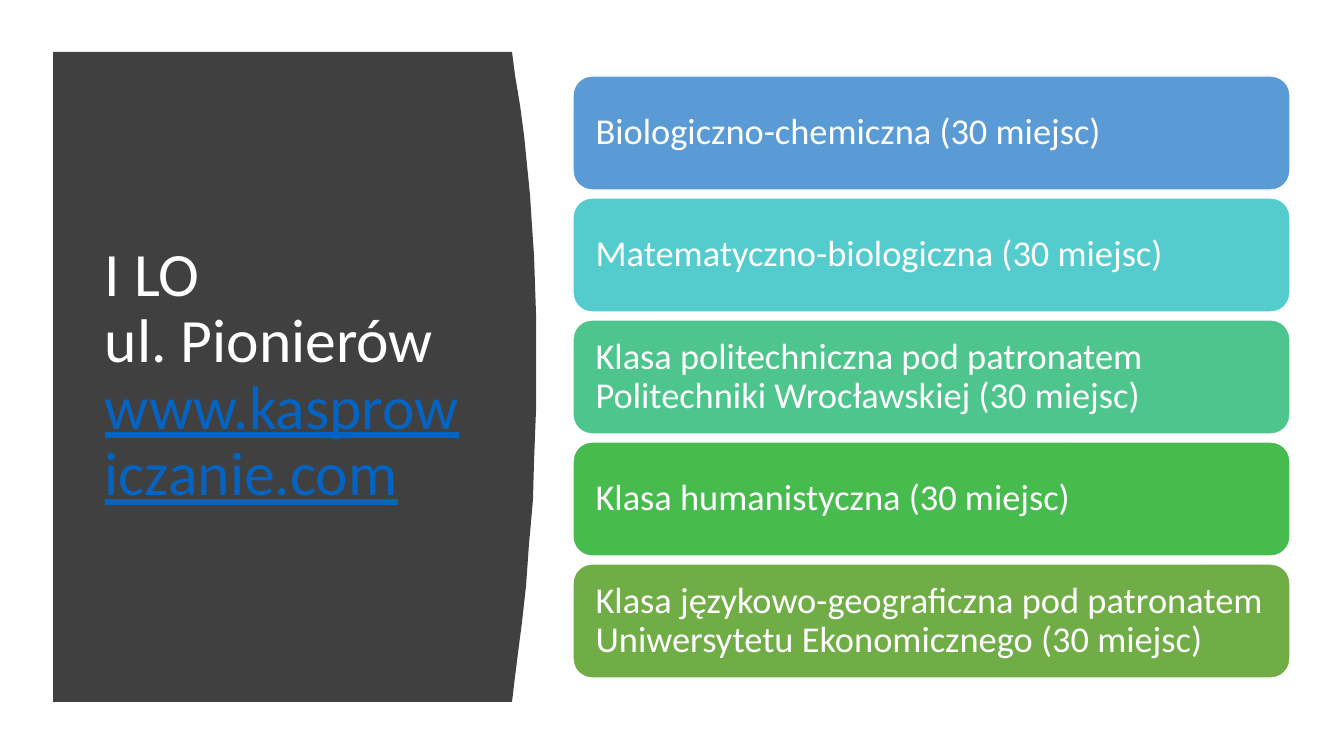
from pptx import Presentation
from pptx.dml.color import RGBColor
from pptx.enum.shapes import MSO_SHAPE
from pptx.enum.text import MSO_ANCHOR, PP_ALIGN
from pptx.util import Pt

WHITE = RGBColor(0xFF, 0xFF, 0xFF)
DARK = RGBColor(0x40, 0x40, 0x40)
LINK = RGBColor(0x05, 0x63, 0xC1)
BLUE = RGBColor(0x5B, 0x9B, 0xD5)
TEAL = RGBColor(0x54, 0xCC, 0xCD)
MINT = RGBColor(0x4D, 0xC5, 0x8D)
GREEN = RGBColor(0x48, 0xBB, 0x4F)
OLIVE = RGBColor(0x70, 0xAD, 0x47)

# Content
TITLE = [
    ("I LO \vul. Pionierów\v", {"color": WHITE}),
    ("www.kasprowiczanie.com", {"color": LINK, "underline": True}),
]
CLASSES = [
    ("Biologiczno-chemiczna (30 miejsc)", BLUE),
    ("Matematyczno-biologiczna (30 miejsc)", TEAL),
    ("Klasa politechniczna pod patronatem Politechniki Wrocławskiej (30 miejsc)", MINT),
    ("Klasa humanistyczna (30 miejsc)", GREEN),
    ("Klasa językowo-geograficzna pod patronatem Uniwersytetu Ekonomicznego (30 miejsc)", OLIVE),
]

# Layout in px
PX = 914400 / 100.8
SIZE = (1344, 756)
PANEL = [
    (53, 52), (512, 52), (515, 75), (520, 105), (524, 135), (527, 165),
    (530, 195), (532, 226), (534, 255), (535, 284), (536, 314), (536, 342),
    (536, 383), (536, 410), (535, 436), (534, 462), (533, 499), (531, 522),
    (529, 544), (526, 586), (522, 622), (518, 653), (515, 677), (512, 702),
    (53, 702),
]
TITLE_BOX = (95, 112, 377, 528)
LEFT, TOP, WIDE, HIGH, STEP = 573, 76, 717, 114, 122
PAD = 17


def emu(*vals):
    return [round(v * PX) for v in vals]


def paint(shape, fill):
    shape.shadow.inherit = False
    shape.fill.solid()
    shape.fill.fore_color.rgb = fill


def write(shape, runs, size):
    frame = shape.text_frame
    frame.word_wrap = True
    frame.vertical_anchor = MSO_ANCHOR.MIDDLE
    para = frame.paragraphs[0]
    para.alignment = PP_ALIGN.LEFT
    para.line_spacing = 0.9
    for text, look in runs:
        for num, line in enumerate(text.split("\v")):
            if num:
                para.add_line_break()
            if not line:
                continue
            run = para.add_run()
            run.text = line
            form = {"name": "Calibri", "size": Pt(size), **look}
            run.font.color.rgb = form.pop("color")
            for key, val in form.items():
                setattr(run.font, key, val)


deck = Presentation()
deck.slide_width, deck.slide_height = emu(*SIZE)
slide = deck.slides.add_slide(deck.slide_layouts[6])
shapes = slide.shapes

# Dark panel with a curved right edge
path = shapes.build_freeform(*PANEL[0], scale=PX)
path.add_line_segments(PANEL[1:], close=True)
panel = path.convert_to_shape()
paint(panel, DARK)
panel.line.fill.background()

# School title
write(shapes.add_textbox(*emu(*TITLE_BOX)), TITLE, 44)

# Class cards
for row, (text, fill) in enumerate(CLASSES):
    box = emu(LEFT, TOP + row * STEP, WIDE, HIGH)
    card = shapes.add_shape(MSO_SHAPE.ROUNDED_RECTANGLE, *box)
    paint(card, fill)
    card.line.color.rgb = WHITE
    card.line.width = Pt(1)
    for side in ("left", "top", "right", "bottom"):
        setattr(card.text_frame, f"margin_{side}", emu(PAD)[0])
    write(card, [(text, {"color": WHITE})], 26)

deck.save("out.pptx")
